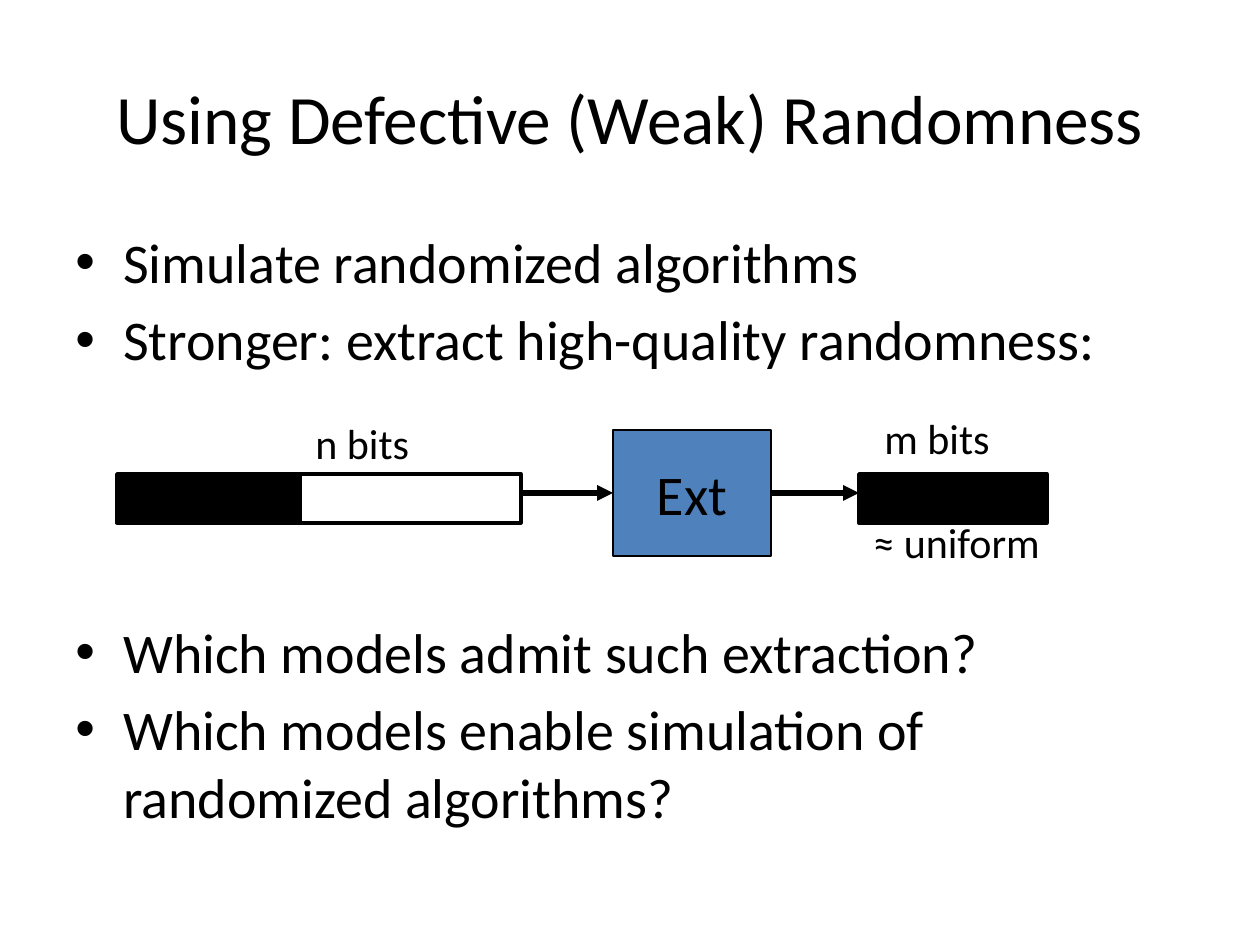
import pptx
import pptx.dml.color
import pptx.enum.shapes
import pptx.enum.text
import pptx.oxml.ns
import pptx.util
from lxml import etree

PX = 914400 / 126
FONT = "Calibri"
BLACK = "000000"
WHITE = "FFFFFF"
BLUE = "4F81BD"
ALIGN = pptx.enum.text.PP_ALIGN
ANCHOR = pptx.enum.text.MSO_ANCHOR
qn = pptx.oxml.ns.qn


def px(length):
    return pptx.util.Emu(round(length * PX))


def color(value):
    return pptx.dml.color.RGBColor.from_string(value)


def write(shape, text, size=24, align=ALIGN.LEFT, anchor=ANCHOR.TOP, wrap=False):
    """Fill a shape with one paragraph for each line of text."""
    frame = shape.text_frame
    frame.word_wrap = wrap
    frame.vertical_anchor = anchor
    frame.text = text
    for paragraph in frame.paragraphs:
        paragraph.alignment = align
        for run in paragraph.runs:
            run.font.name = FONT
            run.font.size = pptx.util.Pt(size)
            run.font.color.rgb = color(BLACK)
    return frame


def add_text(slide, box, text, **style):
    return write(slide.shapes.add_textbox(*map(px, box)), text, **style)


def add_rectangle(slide, box, fill, line_width=2):
    shape = slide.shapes.add_shape(
        pptx.enum.shapes.MSO_SHAPE.RECTANGLE, *map(px, box))
    shape.shadow.inherit = False
    shape.fill.solid()
    shape.fill.fore_color.rgb = color(fill)
    shape.line.color.rgb = color(BLACK)
    shape.line.width = pptx.util.Pt(line_width)
    return shape


def add_arrow(slide, start_x, end_x, y):
    arrow = slide.shapes.add_connector(
        pptx.enum.shapes.MSO_CONNECTOR.STRAIGHT,
        px(start_x), px(y), px(end_x), px(y))
    arrow.line.color.rgb = color(BLACK)
    arrow.line.width = pptx.util.Pt(3)
    etree.SubElement(arrow.line._get_or_add_ln(), qn("a:tailEnd"), type="triangle")
    etree.SubElement(arrow._element.spPr, qn("a:effectLst"))
    return arrow


def add_title(slide, box, text):
    add_text(slide, box, text, size=39.6, align=ALIGN.CENTER,
             anchor=ANCHOR.MIDDLE, wrap=True)


def add_bullets(slide, box, items):
    """Place (text, space before in points) items as a bulleted list."""
    frame = add_text(slide, box, "\n".join(text for text, _ in items),
                     size=32, wrap=True)
    indent = pptx.util.Inches(0.38)
    for paragraph, (_, space) in zip(frame.paragraphs, items):
        paragraph.space_before = pptx.util.Pt(space)
        properties = paragraph._p.get_or_add_pPr()
        properties.set("marL", str(indent))
        properties.set("indent", str(-indent))
        etree.SubElement(properties, qn("a:buFont"), typeface="Arial")
        etree.SubElement(properties, qn("a:buChar"), char="•")


def add_extractor(slide, box):
    """Draw the weak source, the extractor and its nearly uniform output."""
    left, top, width, height = box
    middle = top + height / 2
    bar_top, bar_height = top + 44, 49
    output_width = 188
    output_left = left + width - output_width
    source_right = left + 404

    extractor_left, extractor_width = left + 496, 158
    extractor = add_rectangle(
        slide, (extractor_left, top, extractor_width, height), BLUE, 0.75)
    write(extractor, "Ext", size=32, align=ALIGN.CENTER, anchor=ANCHOR.MIDDLE)

    arrow_in = add_arrow(slide, source_right, extractor_left, middle)
    arrow_in.end_connect(extractor, 1)
    arrow_out = add_arrow(
        slide, extractor_left + extractor_width, output_left, middle)
    arrow_out.begin_connect(extractor, 3)

    add_rectangle(slide, (left + 149, bar_top, 255, bar_height), WHITE)
    add_rectangle(slide, (left, bar_top, 183, bar_height), BLACK)
    add_rectangle(slide, (output_left, bar_top, output_width, bar_height), BLACK)

    add_text(slide, (left + 186, top - 19, 120, 63), "n bits")
    add_text(slide, (output_left + 13, top - 24, 132, 63), "m bits")
    add_text(slide, (output_left + 2, top + 80, 194, 63), "≈ uniform")


def main():
    presentation = pptx.Presentation()
    presentation.slide_width = px(1260)
    presentation.slide_height = px(945)
    slide = presentation.slides.add_slide(presentation.slide_layouts[6])

    add_title(slide, (63, 38, 1134, 157), "Using Defective (Weak) Randomness")
    add_bullets(slide, (63, 221, 1134, 624), [
        ("Simulate randomized algorithms", 6),
        ("Stronger: extract high-quality randomness:", 6),
        ("Which models admit such extraction?", 140),
        ("Which models enable simulation of randomized algorithms?", 6),
    ])
    add_extractor(slide, (117, 430, 930, 126))

    presentation.save("out.pptx")


if __name__ == "__main__":
    main()
